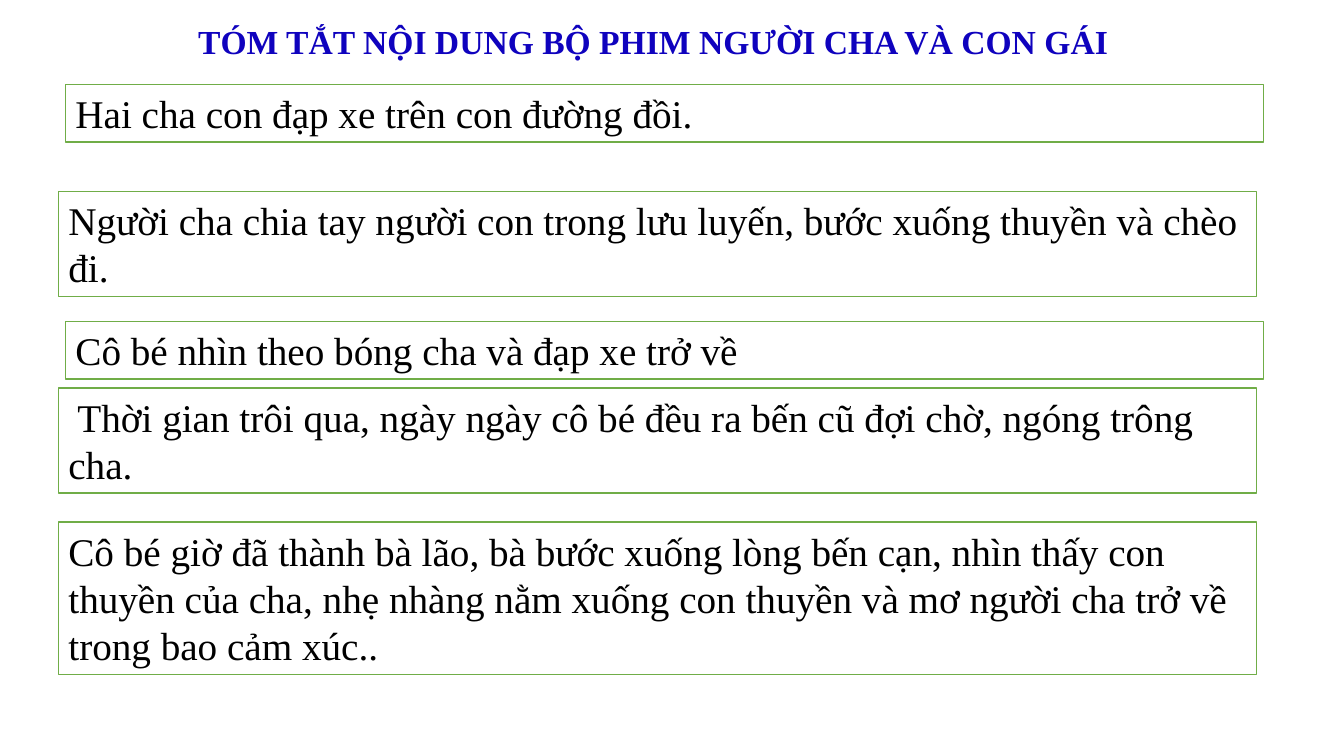
import pptx
import pptx.util
import pptx.dml.color
import pptx.enum.shapes
import pptx.enum.text

Inches, Pt = pptx.util.Inches, pptx.util.Pt
FONT = "Times New Roman"
BOX_WIDTH = 11.88
LINE_HEIGHT, BOX_PADDING = 0.47, 0.1
LEFT, INDENTED = 0.58, 0.65


def color(value):
    return pptx.dml.color.RGBColor.from_string(value)


def write(shape, text, size, ink, align, bold=False):
    frame = shape.text_frame
    frame.word_wrap = True
    frame.auto_size = pptx.enum.text.MSO_AUTO_SIZE.NONE
    frame.vertical_anchor = pptx.enum.text.MSO_ANCHOR.TOP
    frame.text = text
    para = frame.paragraphs[0]
    para.alignment = align
    para.font.name = FONT
    para.font.size = Pt(size)
    para.font.bold = bold
    para.font.color.rgb = color(ink)


deck = pptx.Presentation()
deck.slide_width, deck.slide_height = Inches(13.33), Inches(7.5)
page = deck.slides.add_slide(deck.slide_layouts[5])

# Title
title = page.shapes.title
title.left, title.top = Inches(1.65), Inches(0.16)
title.width, title.height = Inches(9.74), Inches(0.5)
write(title, "TÓM TẮT NỘI DUNG BỘ PHIM NGƯỜI CHA VÀ CON GÁI ", 24, "0F02BE",
      pptx.enum.text.PP_ALIGN.CENTER, bold=True)

# Story steps: left, top, number of text lines, text
steps = [
    (INDENTED, 0.84, 1, "Hai cha con đạp xe trên con đường đồi."),
    (LEFT, 1.9, 2, "Người cha chia tay người con trong lưu luyến, "
                   "bước xuống thuyền và chèo đi."),
    (INDENTED, 3.19, 1, "Cô bé nhìn theo bóng cha và đạp xe trở về"),
    (LEFT, 3.85, 2, " Thời gian trôi qua, ngày ngày cô bé đều ra bến cũ "
                    "đợi chờ, ngóng trông cha."),
    (LEFT, 5.18, 3, "Cô bé giờ đã thành bà lão, bà bước xuống lòng bến cạn, "
                    "nhìn thấy con thuyền của cha, nhẹ nhàng nằm xuống con "
                    "thuyền và mơ người cha trở về trong bao cảm xúc.."),
]
for left, top, lines, text in steps:
    box = page.shapes.add_shape(
        pptx.enum.shapes.MSO_SHAPE.RECTANGLE, Inches(left), Inches(top),
        Inches(BOX_WIDTH), Inches(BOX_PADDING + lines * LINE_HEIGHT))
    box.shadow.inherit = False
    box.fill.solid()
    box.fill.fore_color.rgb = color("FFFFFF")
    box.line.color.rgb = color("70AD47")
    box.line.width = Pt(1)
    write(box, text, 28, "000000", pptx.enum.text.PP_ALIGN.LEFT)

deck.save("out.pptx")
